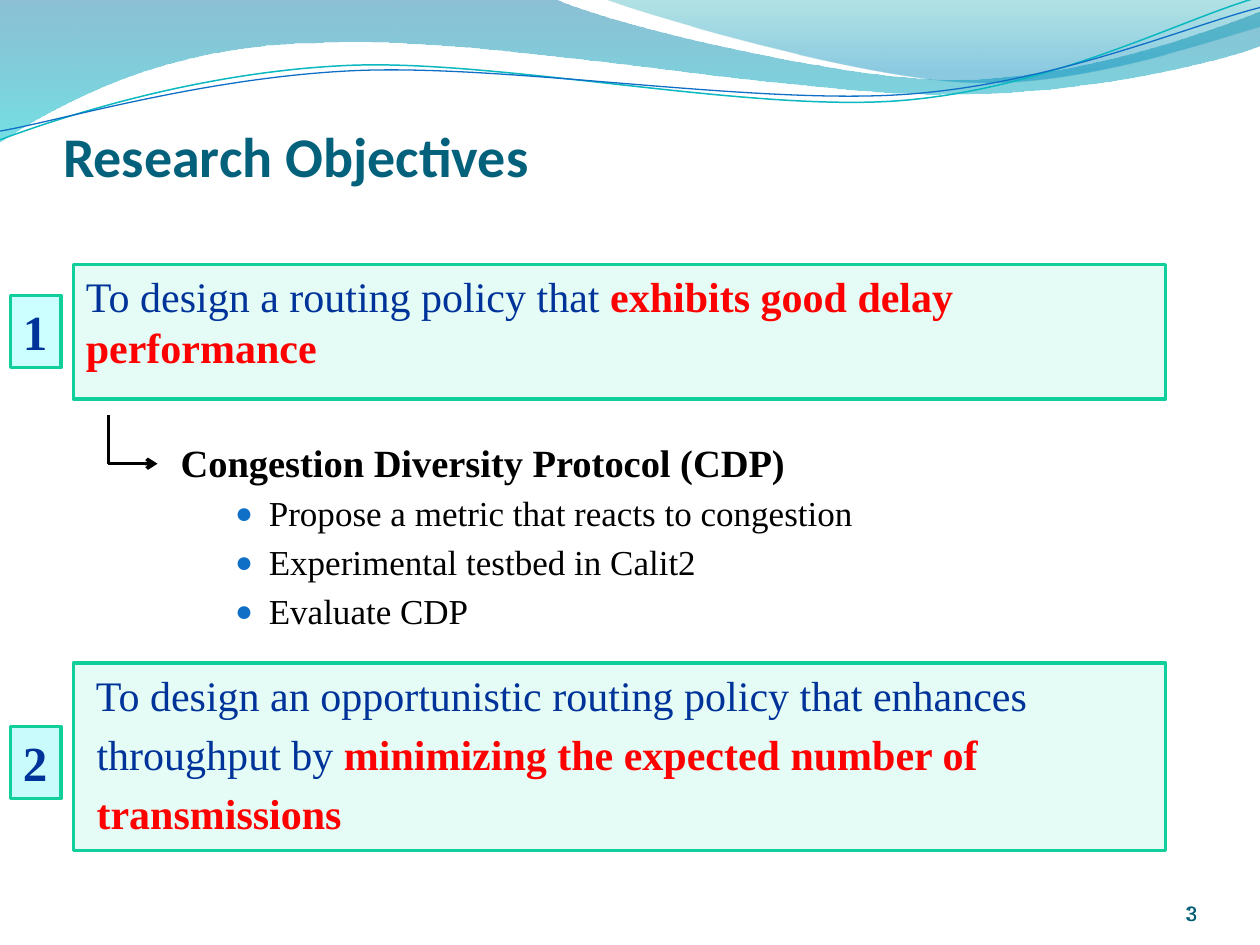
import pptx
import pptx.dml.color
import pptx.enum.shapes
import pptx.enum.text
import pptx.oxml.ns
import pptx.util
import lxml.etree

Pt = pptx.util.Pt
RGBColor = pptx.dml.color.RGBColor
qn = pptx.oxml.ns.qn
ALIGN = pptx.enum.text.PP_ALIGN
ANCHOR = pptx.enum.text.MSO_ANCHOR
AUTO_SIZE = pptx.enum.text.MSO_AUTO_SIZE
RECTANGLE = pptx.enum.shapes.MSO_SHAPE.RECTANGLE

TITLE_TEAL = RGBColor(0x04, 0x61, 0x7B)
NUMBER_TEAL = RGBColor(0x04, 0x5D, 0x75)
NAVY = RGBColor(0x00, 0x33, 0x99)
RED = RGBColor(0xFF, 0x00, 0x00)
BLACK = RGBColor(0x00, 0x00, 0x00)
BLUE = RGBColor(0x0F, 0x6F, 0xC6)
AQUA = RGBColor(0x0A, 0xB8, 0xBF)
GREEN = RGBColor(0x10, 0xCF, 0x9B)
MINT = RGBColor(0xCA, 0xFB, 0xED)
CYAN_ONE = RGBColor(0xCC, 0xFF, 0xFF)
CYAN_TWO = RGBColor(0xC9, 0xFA, 0xFC)
SERIF = "Times New Roman"


def add_span(para, text, size, color, bold=False, font=SERIF):
    span = para.add_run()
    span.text = text
    span.font.name = font
    span.font.size = Pt(size)
    span.font.bold = bold
    span.font.color.rgb = color


def set_bullet(para, margin, indent, bullet=None):
    properties = para._p.get_or_add_pPr()
    properties.set("marL", str(Pt(margin)))
    properties.set("indent", str(Pt(indent)))
    if bullet is None:
        lxml.etree.SubElement(properties, qn("a:buNone"))
        return
    color = lxml.etree.SubElement(properties, qn("a:buClr"))
    lxml.etree.SubElement(color, qn("a:srgbClr"), val=str(BLUE))
    lxml.etree.SubElement(properties, qn("a:buSzPct"), val="85000")
    lxml.etree.SubElement(properties, qn("a:buFont"), typeface="Arial")
    lxml.etree.SubElement(properties, qn("a:buChar"), char=bullet)


deck = pptx.Presentation()
deck.slide_width, deck.slide_height = Pt(720), Pt(540)
page = deck.slides.add_slide(deck.slide_layouts[3])
title, cdp_list, second_goal = page.placeholders

waves = [
    ([(0, -0.7), (316.8, -0.7), (342.7, 12.2, 478.1, 45.4, 545.8, 45.4),
      (614.2, 45.4, 689.8, 18.7, 720, 6.5), (720.7, 25.9),
      (707.8, 31.7, 626.4, 54.7, 537.1, 54), (447.8, 54, 275, 20.2, 185, 24.5),
      (92.9, 25.2, 33.1, 59.8, -0.7, 81.4)],
     [(0, RGBColor(0x00, 0x74, 0xA1), 45), (1, RGBColor(0x00, 0xC6, 0xCF), 55)], None),
    ([(344.9, -0.7), (366.5, 7.9, 491, 44.6, 553.7, 46.8),
      (616.3, 49.7, 691.9, 23, 720, 15.1), (720, 0)],
     [(0, RGBColor(0x00, 0xA1, 0xA9), 30), (0.8, RGBColor(0x00, 0x8B, 0xBF), 45)], None),
    ([(0, 79.9), (34.6, 67, 113.8, 41, 199.4, 37.4),
      (284.4, 33.8, 427, 64.1, 513.4, 57.6), (599.8, 51.1, 675.4, 10.8, 718.6, -1.4)],
     None, (AQUA, 0.85)),
    ([(0, 74.9), (33.8, 69.1, 118.1, 43.9, 203.8, 40.3),
      (290.2, 36.7, 429.8, 59.8, 516.2, 54), (601.9, 48.2, 677.5, 15.1, 720, 4.3)],
     None, (BLUE, 0.75)),
]
for steps, stops, stroke in waves:
    corners = [(Pt(x), Pt(y)) for step in steps for x, y in zip(step[::2], step[1::2])]
    builder = page.shapes.build_freeform(*corners[0])
    builder.add_line_segments(corners[1:], close=stops is not None)
    wave = builder.convert_to_shape()
    segments = iter(list(wave._element.iter(qn("a:lnTo"))))
    for step in steps[1:]:
        segment = next(segments)
        if len(step) == 6:
            curve = lxml.etree.Element(qn("a:cubicBezTo"))
            segment.addprevious(curve)
            for part in (segment, next(segments), next(segments)):
                curve.append(part[0])
                part.getparent().remove(part)
    wave.shadow.inherit = False
    if stops:
        wave.line.fill.background()
        wave.fill.gradient()
        wave.fill.gradient_angle = 270
        for stop, (position, color, _) in zip(wave.fill.gradient_stops, stops):
            stop.position = position
            stop.color.rgb = color
        for node, (_, _, opacity) in zip(wave._element.iter(qn("a:srgbClr")), stops):
            lxml.etree.SubElement(node, qn("a:alpha"), val=str(opacity * 1000))
    else:
        wave.fill.background()
        wave.line.color.rgb, wave.line.width = stroke[0], Pt(stroke[1])

title.left, title.top, title.width, title.height = Pt(36), Pt(18), Pt(648), Pt(90)
frame = title.text_frame
frame.auto_size = AUTO_SIZE.NONE
frame.vertical_anchor = ANCHOR.BOTTOM
frame.margin_left = frame.margin_right = frame.margin_bottom = 0
frame.paragraphs[0].alignment = ALIGN.LEFT
add_span(frame.paragraphs[0], "Research Objectives", 32, TITLE_TEAL, True, "Calibri")

for font in ("Cambria", "Arial"):
    number = page.shapes.add_textbox(Pt(624), Pt(500.4), Pt(60), Pt(28.8))
    frame = number.text_frame
    frame.word_wrap = True
    frame.vertical_anchor = ANCHOR.BOTTOM
    frame.margin_left = frame.margin_right = frame.margin_top = frame.margin_bottom = 0
    frame.paragraphs[0].alignment = ALIGN.RIGHT
    add_span(frame.paragraphs[0], "3", 12, NUMBER_TEAL, font=font)

cdp_list.left, cdp_list.top, cdp_list.width, cdp_list.height = Pt(96), Pt(247), Pt(606), Pt(185)
frame = cdp_list.text_frame
frame.auto_size = AUTO_SIZE.NONE
add_span(frame.paragraphs[0], "Congestion Diversity Protocol (CDP)", 22, BLACK, True)
set_bullet(frame.paragraphs[0], 21.6, -21.6)
for item in ("Propose a metric that reacts to congestion",
             "Experimental testbed in Calit2",
             "Evaluate CDP"):
    para = frame.add_paragraph()
    para.level = 1
    set_bullet(para, 50.4, -19.2, "●")
    add_span(para, item, 20, BLACK)

first_goal = page.shapes.add_shape(RECTANGLE, Pt(42), Pt(151.2), Pt(624), Pt(77))
second_goal.left, second_goal.top = Pt(42), Pt(379)
second_goal.width, second_goal.height = Pt(624), Pt(107)
badge_one = page.shapes.add_shape(RECTANGLE, Pt(6), Pt(168.8), Pt(28.8), Pt(41.2))
badge_two = page.shapes.add_shape(RECTANGLE, Pt(6), Pt(415.2), Pt(28.8), Pt(41.2))

for box, fill in ((first_goal, MINT), (second_goal, MINT),
                  (badge_one, CYAN_ONE), (badge_two, CYAN_TWO)):
    box.fill.solid()
    box.fill.fore_color.rgb = fill
    if fill == MINT:
        tint = next(box._element.iter(qn("a:srgbClr")))
        lxml.etree.SubElement(tint, qn("a:alpha"), val="50000")
    box.line.color.rgb, box.line.width = GREEN, Pt(2)
    box.text_frame.vertical_anchor = ANCHOR.TOP
    box.text_frame.auto_size = AUTO_SIZE.NONE
    box.text_frame.paragraphs[0].alignment = ALIGN.LEFT

first_goal.shadow.inherit = False
para = first_goal.text_frame.paragraphs[0]
add_span(para, "To design a routing policy that ", 24, NAVY)
add_span(para, "exhibits good delay performance", 24, RED, True)

goal_lines = [
    [(" To design an opportunistic routing policy that enhances", NAVY)],
    [(" throughput by ", NAVY), ("minimizing the expected number of", RED)],
    [(" transmissions", RED)],
]
frame = second_goal.text_frame
for index, spans in enumerate(goal_lines):
    para = frame.add_paragraph() if index else frame.paragraphs[0]
    set_bullet(para, 21.6, -21.6)
    for text, color in spans:
        add_span(para, text, 24, color, color == RED)

for badge, digit in ((badge_one, "1"), (badge_two, "2")):
    badge.shadow.inherit = False
    badge.text_frame.word_wrap = False
    badge.text_frame.auto_size = AUTO_SIZE.SHAPE_TO_FIT_TEXT
    add_span(badge.text_frame.paragraphs[0], digit, 28, NAVY, True)

elbow = [(62, 237), (62, 265), (90, 265)]
for start, end in zip(elbow, elbow[1:]):
    line = page.shapes.add_connector(
        pptx.enum.shapes.MSO_CONNECTOR.STRAIGHT, *map(Pt, start + end))
    line.line.color.rgb, line.line.width = BLACK, Pt(2)
    lxml.etree.SubElement(line._element.spPr, qn("a:effectLst"))
lxml.etree.SubElement(line.line._get_or_add_ln(), qn("a:tailEnd"), type="arrow")

deck.save("out.pptx")
